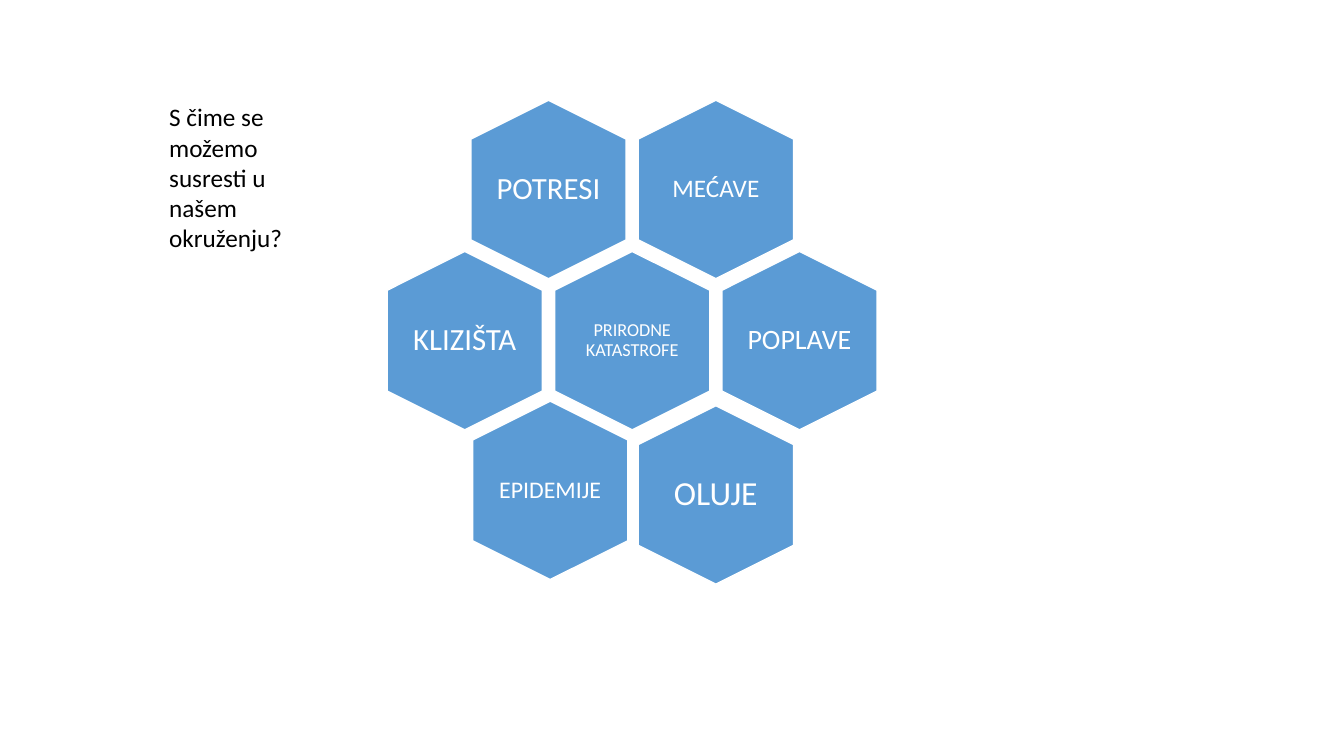
"""Build a slide with a honeycomb of natural disasters and a question beside it."""
from pptx import Presentation
from pptx.dml.color import RGBColor
from pptx.enum.shapes import MSO_SHAPE
from pptx.enum.text import MSO_ANCHOR, PP_ALIGN
from pptx.util import Inches, Pt

HEXAGON = MSO_SHAPE.HEXAGON
MIDDLE, TOP = MSO_ANCHOR.MIDDLE, MSO_ANCHOR.TOP
CENTER, LEFT = PP_ALIGN.CENTER, PP_ALIGN.LEFT
COLORS = {name: RGBColor.from_string(value) for name, value in {
    "cell": "5B9BD5", "white": "FFFFFF", "black": "000000"}.items()}

CENTER_X, CENTER_Y = 6.27, 3.38
COL_STEP, ROW_STEP = 1.66, 1.5
HEX_W, HEX_H = 1.77, 1.54
LABEL_W, LABEL_H = 1.06, 1.22

CELLS = [
    ("MEĆAVE", 0.5, -1, 18, 0.07),
    ("POTRESI", -0.5, -1, 22, 0),
    ("PRIRODNE KATASTROFE", 0, 0, 13, 0.05),
    ("POPLAVE", 1, 0, 20, 0),
    ("OLUJE", 0.5, 1.02, 24, 0.1),
    ("KLIZIŠTA", -1, 0, 22, 0),
    ("EPIDEMIJE", -0.49, 0.99, 17, 0),
]


def box(x, y, w, h):
    """Return left, top, width and height around a centre point."""
    return Inches(x - w / 2), Inches(y - h / 2), Inches(w), Inches(h)


def add_text(s, place, text, size, color, anchor, align):
    """Add a wrapped text box and return its text frame."""
    tf = s.shapes.add_textbox(*place).text_frame
    tf.word_wrap = True
    tf.vertical_anchor = anchor
    tf.text = text
    p = tf.paragraphs[0]
    p.alignment = align
    font = p.runs[0].font
    font.name, font.size = "Calibri", Pt(size)
    font.color.rgb = COLORS[color]
    return tf


prs = Presentation()
prs.slide_width, prs.slide_height = Inches(13.33), Inches(7.5)
s = prs.slides.add_slide(prs.slide_layouts[6])

for text, col, row, size, inset in CELLS:
    x, y = CENTER_X + col * COL_STEP, CENTER_Y + row * ROW_STEP
    sp = s.shapes.add_shape(HEXAGON, *box(x, y, HEX_W, HEX_H))
    sp.rotation = 90
    sp.shadow.inherit = False
    sp.fill.solid()
    sp.fill.fore_color.rgb = COLORS["cell"]
    sp.line.color.rgb = COLORS["white"]
    sp.line.width = Pt(1)

    tf = add_text(s, box(x, y, LABEL_W, LABEL_H), text, size, "white", MIDDLE, CENTER)
    tf.margin_left = tf.margin_right = Inches(inset)
    tf.margin_top = tf.margin_bottom = Inches(inset)
    tf.paragraphs[0].line_spacing = 0.9

add_text(s, box(2.36, 1.77, 1.56, 1.62), "S čime se možemo susresti u našem okruženju?",
         18, "black", TOP, LEFT)

prs.save("out.pptx")
